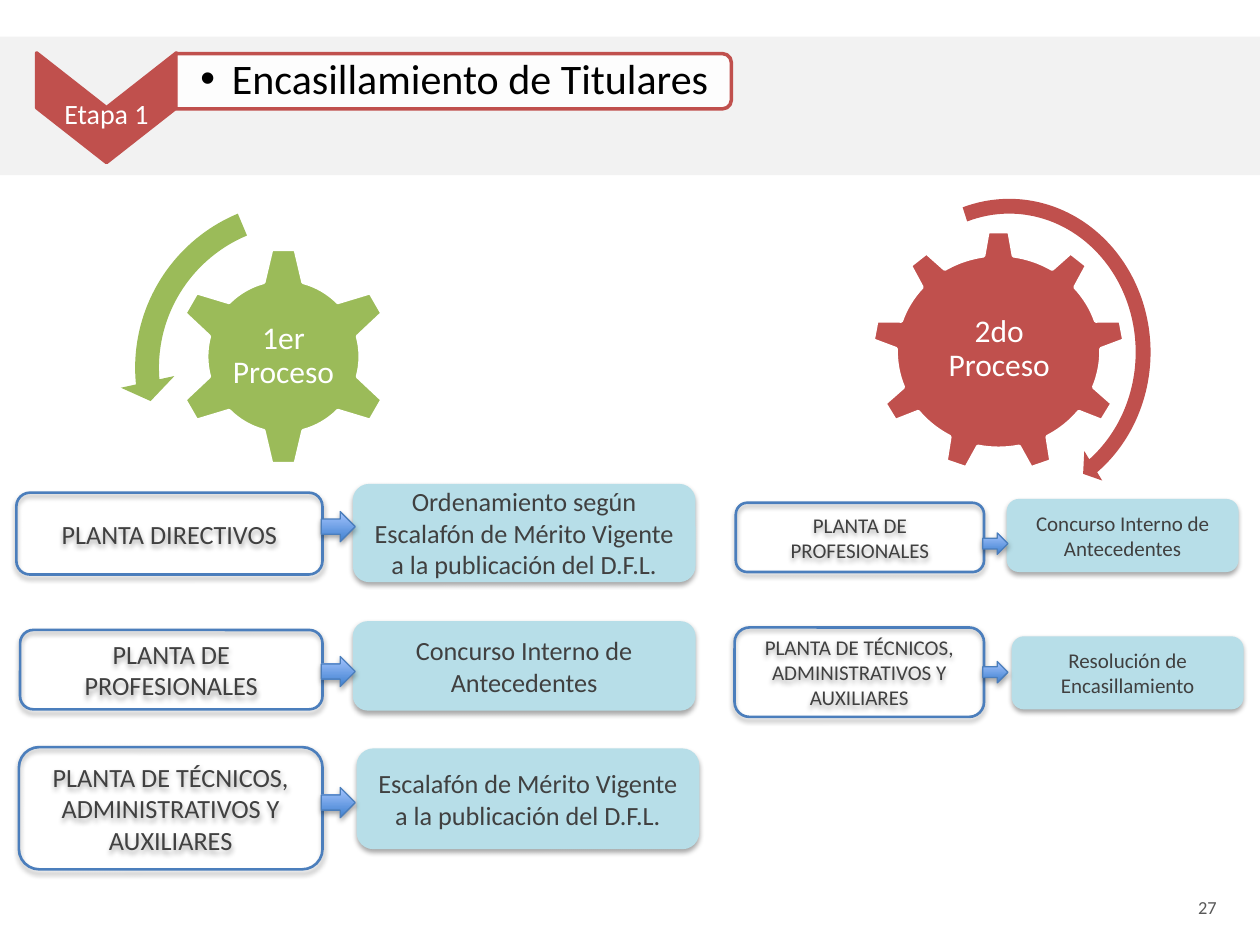
from lxml import etree
from pptx import Presentation
from pptx.dml.color import RGBColor
from pptx.enum.shapes import MSO_SHAPE
from pptx.enum.text import MSO_ANCHOR, MSO_AUTO_SIZE, PP_ALIGN
from pptx.oxml.ns import qn
from pptx.util import Inches, Pt

RECTANGLE, ROUNDED = MSO_SHAPE.RECTANGLE, MSO_SHAPE.ROUNDED_RECTANGLE
CHEVRON, TITLE_TAB = MSO_SHAPE.CHEVRON, MSO_SHAPE.ROUND_2_SAME_RECTANGLE
GEAR_6, GEAR_9 = MSO_SHAPE.GEAR_6, MSO_SHAPE.GEAR_9
TURN_RIGHT, TURN_LEFT = MSO_SHAPE.CIRCULAR_ARROW, MSO_SHAPE.LEFT_CIRCULAR_ARROW
ARROW = MSO_SHAPE.RIGHT_ARROW
MIDDLE, TOP = MSO_ANCHOR.MIDDLE, MSO_ANCHOR.TOP
CENTER, LEFT = PP_ALIGN.CENTER, PP_ALIGN.LEFT
NO_FIT = MSO_AUTO_SIZE.NONE

FONT = "Calibri"
WHITE = RGBColor(0xFF, 0xFF, 0xFF)
BLACK = RGBColor(0, 0, 0)
RED = RGBColor(0xC0, 0x50, 0x4D)
GREEN = RGBColor(0x9B, 0xBB, 0x59)
BAND_GRAY = RGBColor(0xF2, 0xF2, 0xF2)
TEXT_GRAY = RGBColor(0x40, 0x40, 0x40)
NUMBER_GRAY = RGBColor(0x59, 0x59, 0x59)
AQUA = RGBColor(0xB7, 0xDE, 0xE8)
OUTLINE_BLUE = RGBColor(0x4B, 0x7E, 0xBC)
ARROW_COLORS = (RGBColor(0x3F, 0x80, 0xCE), RGBColor(0xA4, 0xC4, 0xFF))

TITLE = "Encasillamiento de Titulares"
STAGE = "Etapa 1"
SLIDE_NUMBER = "27"
PROFESSIONALS = "PLANTA DE PROFESIONALES"
ASSISTANTS = "PLANTA DE TÉCNICOS, ADMINISTRATIVOS Y AUXILIARES"
CONTEST = "Concurso Interno de Antecedentes"

PROCESSES = [
    {
        "label": "2do Proceso", "color": RED,
        "gear": (GEAR_9, (6.92, 1.83, 2.01, 1.92)),
        "label_box": (7.32, 2.28, 1.22, 0.99),
        "turn": (TURN_RIGHT, (6.81, 1.5, 2.4, 2.59)),
        "turn_shape": (0.049, 3.126, 32.104, 151.316, 0.057),
        "text_size": 12, "arrow_size": (0.2, 0.17),
        "staff_right": 7.81, "method_width": 1.84,
        "steps": [
            (PROFESSIONALS, (5.84, 3.99, 0.55), CONTEST, (7.99, 3.96, 0.58), 4.23),
            (ASSISTANTS, (5.83, 4.98, 0.71),
             "Resolución de Encasillamiento", (8.03, 5.05, 0.58), 5.25),
        ],
    },
    {
        "label": "1er Proceso", "color": GREEN,
        "gear": (GEAR_6, (1.38, 1.96, 1.74, 1.74)),
        "label_box": (1.8, 2.4, 0.9, 0.86),
        "turn": (TURN_LEFT, (0.95, 1.47, 2.9, 2.9)),
        "turn_shape": (0.065, 4.3, 104.891, 148.378, 0.075),
        "text_size": 15, "arrow_size": (0.27, 0.24),
        "staff_right": 2.56, "method_width": 2.72,
        "steps": [
            ("PLANTA DIRECTIVOS", (0.13, 3.91, 0.65),
             "Ordenamiento según Escalafón de Mérito Vigente a la publicación del D.F.L.",
             (2.8, 3.84, 0.78), 4.06),
            (PROFESSIONALS, (0.16, 5, 0.63), CONTEST, (2.8, 4.93, 0.71), 5.21),
            (ASSISTANTS, (0.15, 5.93, 0.97),
             "Escalafón de Mérito Vigente a la publicación del D.F.L.",
             (2.83, 5.94, 0.8), 6.25),
        ],
    },
]


def inches(values):
    return [Inches(value) for value in values]


def apply(target, values):
    for name, value in values.items():
        setattr(target, name, value)


def write(shape, text, size, color, align=CENTER, anchor=MIDDLE,
          margins=(0.1, 0.05, 0.1, 0.05), spacing=1.0, wrap=True):
    frame = shape.text_frame
    sides = ("margin_left", "margin_top", "margin_right", "margin_bottom")
    apply(frame, {"auto_size": NO_FIT, "word_wrap": wrap, "vertical_anchor": anchor,
                  **dict(zip(sides, inches(margins)))})
    frame.text = text
    paragraph = frame.paragraphs[0]
    apply(paragraph, {"alignment": align, "line_spacing": spacing})
    apply(paragraph.runs[0].font, {"name": FONT, "size": Pt(size)})
    paragraph.runs[0].font.color.rgb = color


def add_label(slide, box, *text_args, **text_format):
    write(slide.shapes.add_textbox(*inches(box)), *text_args, **text_format)


def add_figure(slide, kind, box, fill=None, line=None, line_width=2, shadow=False):
    figure = slide.shapes.add_shape(kind, *inches(box))
    figure.shadow.inherit = False
    if fill is None:
        figure.fill.background()
    else:
        figure.fill.solid()
        figure.fill.fore_color.rgb = fill
    if line is None:
        figure.line.fill.background()
    else:
        figure.line.color.rgb = line
        figure.line.width = Pt(line_width)
    if shadow:
        effects = figure._element.spPr.find(qn("a:effectLst"))
        outer = etree.SubElement(effects, qn("a:outerShdw"), blurRad=str(Pt(3.1)),
                                 dist=str(Pt(1.8)), dir="5400000", rotWithShape="0")
        shade = etree.SubElement(outer, qn("a:srgbClr"), val=str(BLACK))
        etree.SubElement(shade, qn("a:alpha"), val="35000")
    return figure


def add_process(slide, process):
    kind, box = process["gear"]
    add_figure(slide, kind, box, process["color"], WHITE)
    add_label(slide, process["label_box"], process["label"], 18, WHITE,
              margins=(0,) * 4, spacing=0.9)
    kind, box = process["turn"]
    turn = add_figure(slide, kind, box, process["color"])
    for index, value in enumerate(process["turn_shape"]):
        turn.adjustments[index] = value


def add_step(slide, process, step):
    staff, (left, top, height), method, (method_left, method_top, method_height), arrow_top = step
    right, size = process["staff_right"], process["text_size"]
    staff_box = add_figure(slide, ROUNDED, (left, top, right - left, height),
                           line=OUTLINE_BLUE, line_width=1.5, shadow=True)
    write(staff_box, staff, size, TEXT_GRAY)
    method_box = add_figure(
        slide, ROUNDED, (method_left, method_top, process["method_width"], method_height),
        AQUA, shadow=True)
    write(method_box, method, size, TEXT_GRAY)
    arrow = add_figure(slide, ARROW, (right - 0.01, arrow_top, *process["arrow_size"]),
                       line=OUTLINE_BLUE, line_width=0.75, shadow=True)
    arrow.fill.gradient()
    arrow.fill.gradient_angle = 90
    for stop, color, position in zip(arrow.fill.gradient_stops, ARROW_COLORS, (0, 1)):
        stop.color.rgb = color
        stop.position = position


def add_heading(slide):
    add_figure(slide, RECTANGLE, (0, 0.29, 10, 1.1), BAND_GRAY)
    chevron = add_figure(slide, CHEVRON, (0.41, 0.3, 0.87, 1.11), RED, RED)
    chevron.rotation = 90
    add_label(slide, (0.29, 0.79, 1.11, 0.26), STAGE, 16, WHITE,
              margins=(0.02,) * 4, spacing=0.9)
    tab = add_figure(slide, TITLE_TAB, (3.38, -1.56, 0.44, 4.41), WHITE, RED)
    tab.rotation = 90
    tab_color = tab._element.spPr.find(qn("a:solidFill"))[0]
    etree.SubElement(tab_color, qn("a:alpha"), val="90000")

    title = slide.shapes.title
    apply(title, dict(zip(("left", "top", "width", "height"),
                          inches((1.4, 0.44, 4.36, 0.4)))))
    write(title, TITLE, 24, BLACK, align=LEFT, margins=(0.19, 0.02, 0.02, 0.02), spacing=0.9)
    properties = title.text_frame.paragraphs[0]._p.get_or_add_pPr()
    properties.set("marL", str(Inches(0.25)))
    properties.set("indent", str(Inches(-0.25)))
    etree.SubElement(properties, qn("a:buFont"), typeface="Arial")
    etree.SubElement(properties, qn("a:buChar"), char="•")
    slide.shapes._spTree.append(title._element)


def main():
    deck = Presentation()
    deck.slide_width, deck.slide_height = Inches(10), Inches(7.5)
    slide = deck.slides.add_slide(deck.slide_layouts[5])
    add_label(slide, (9.41, 7.06, 0.48, 0.29), SLIDE_NUMBER, 10.5, NUMBER_GRAY,
              align=LEFT, anchor=TOP, wrap=False)
    for process in PROCESSES:
        add_process(slide, process)
    add_heading(slide)
    for process in PROCESSES:
        for step in process["steps"]:
            add_step(slide, process, step)
    deck.save("out.pptx")


if __name__ == "__main__":
    main()
